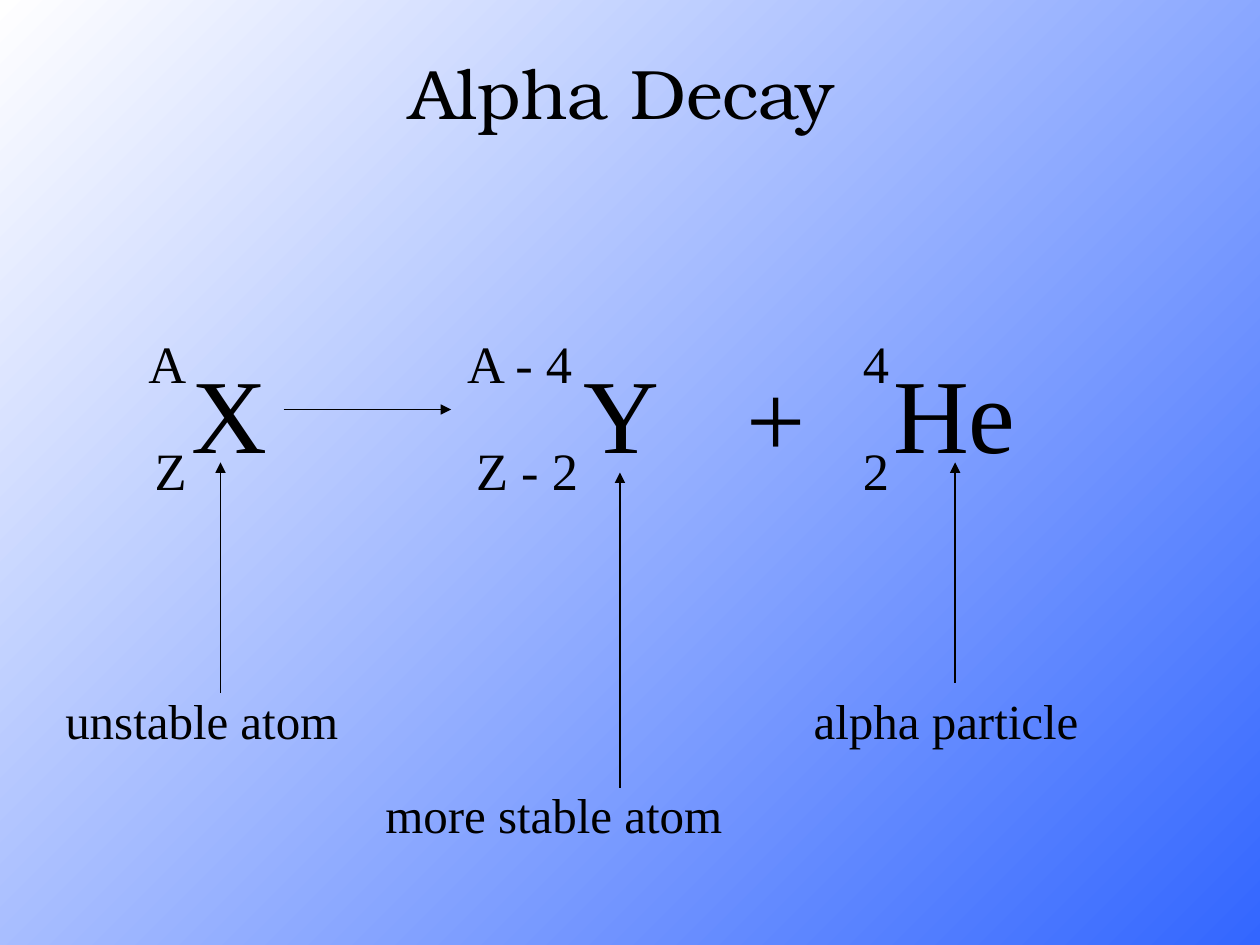
import pptx
import pptx.dml.color
import pptx.enum.shapes
import pptx.enum.text
import pptx.oxml.ns
import pptx.util
from lxml import etree
from pptx.util import Inches

BLACK = pptx.dml.color.RGBColor(0x00, 0x00, 0x00)
WHITE = pptx.dml.color.RGBColor(0xFF, 0xFF, 0xFF)
BLUE = pptx.dml.color.RGBColor(0x33, 0x66, 0xFF)
BODY_FONT = "Times New Roman"
TITLE_FONT = "TeX Gyre Bonum"

SYMBOL_TOP, MASS_TOP, ATOMIC_TOP = 2.72, 2.58, 3.43


def set_background(slide):
    fill = slide.background.fill
    fill.gradient()
    fill.gradient_angle = 315  # counter-clockwise: runs to the bottom right
    for stop, color in zip(fill.gradient_stops, (WHITE, BLUE)):
        stop.color.rgb = color


def add_text(shapes, text, left, top, width, height, size, font=BODY_FONT):
    s = shapes.add_textbox(Inches(left), Inches(top), Inches(width), Inches(height))
    tf = s.text_frame
    tf.word_wrap = False
    tf.auto_size = pptx.enum.text.MSO_AUTO_SIZE.SHAPE_TO_FIT_TEXT
    p = tf.paragraphs[0]
    p.text = text
    p.font.name = font
    p.font.size = pptx.util.Pt(size)
    p.font.color.rgb = BLACK


def add_symbol(shapes, text, left, width, top=SYMBOL_TOP):
    add_text(shapes, text, left, top, width, 1.1, 60)


def add_nuclide(shapes, symbol, mass, atomic):
    """Each part is (text, left, width)."""
    add_symbol(shapes, *symbol)
    for (text, left, width), top in ((mass, MASS_TOP), (atomic, ATOMIC_TOP)):
        add_text(shapes, text, left, top, width, 0.6, 30)


def add_arrow(shapes, x1, y1, x2, y2):
    s = shapes.add_connector(
        pptx.enum.shapes.MSO_CONNECTOR.STRAIGHT,
        Inches(x1), Inches(y1), Inches(x2), Inches(y2))
    s.line.color.rgb = BLACK
    s.line.width = pptx.util.Pt(0.75)
    qn = pptx.oxml.ns.qn
    etree.SubElement(s.line._get_or_add_ln(), qn("a:tailEnd"), type="triangle")
    etree.SubElement(s._element.spPr, qn("a:effectLst"))


def add_equation(slide):
    shapes = slide.shapes.add_group_shape().shapes
    add_nuclide(shapes, ("X", 1.42, 0.8), ("A", 1.08, 0.5), ("Z", 1.13, 0.46))
    add_nuclide(shapes, ("Y", 4.53, 0.8), ("A - 4", 3.61, 1.06), ("Z - 2", 3.68, 1.01))
    add_arrow(shapes, 2.25, 3.25, 3.58, 3.25)
    add_symbol(shapes, "+", 5.83, 0.67, top=2.75)
    add_nuclide(shapes, ("He", 6.99, 1.17), ("4", 6.75, 0.41), ("2", 6.75, 0.41))


def add_labels(slide):
    labels = (
        # text, left, top, width, arrow x, arrow start, arrow tip
        ("unstable atom", 0.42, 5.43, 2.37, 1.75, 5.5, 3.67),
        ("more stable atom", 2.96, 6.18, 2.88, 4.92, 6.25, 3.75),
        ("alpha particle", 6.36, 5.43, 2.3, 7.58, 5.42, 3.67),
    )
    for text, left, top, width, x, start, tip in labels:
        add_text(slide.shapes, text, left, top, width, 0.57, 28)
        add_arrow(slide.shapes, x, start, x, tip)


def main():
    prs = pptx.Presentation()
    prs.slide_width, prs.slide_height = Inches(10), Inches(7.5)
    slide = prs.slides.add_slide(prs.slide_layouts[6])
    set_background(slide)
    add_equation(slide)
    add_text(slide.shapes, "Alpha Decay", 3.15, 0.34, 3.6, 0.77, 40, TITLE_FONT)
    add_labels(slide)
    prs.save("out.pptx")


if __name__ == "__main__":
    main()
